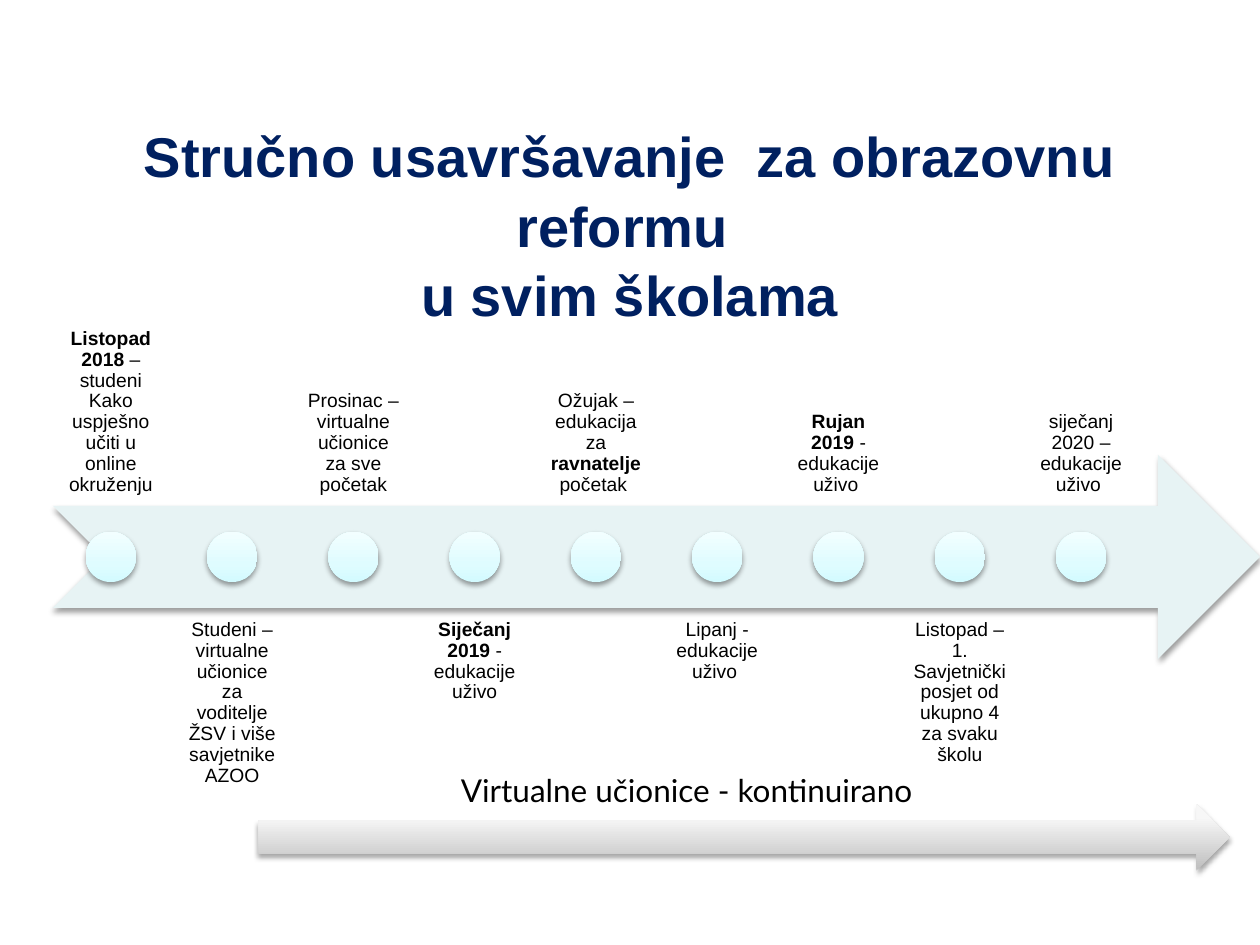
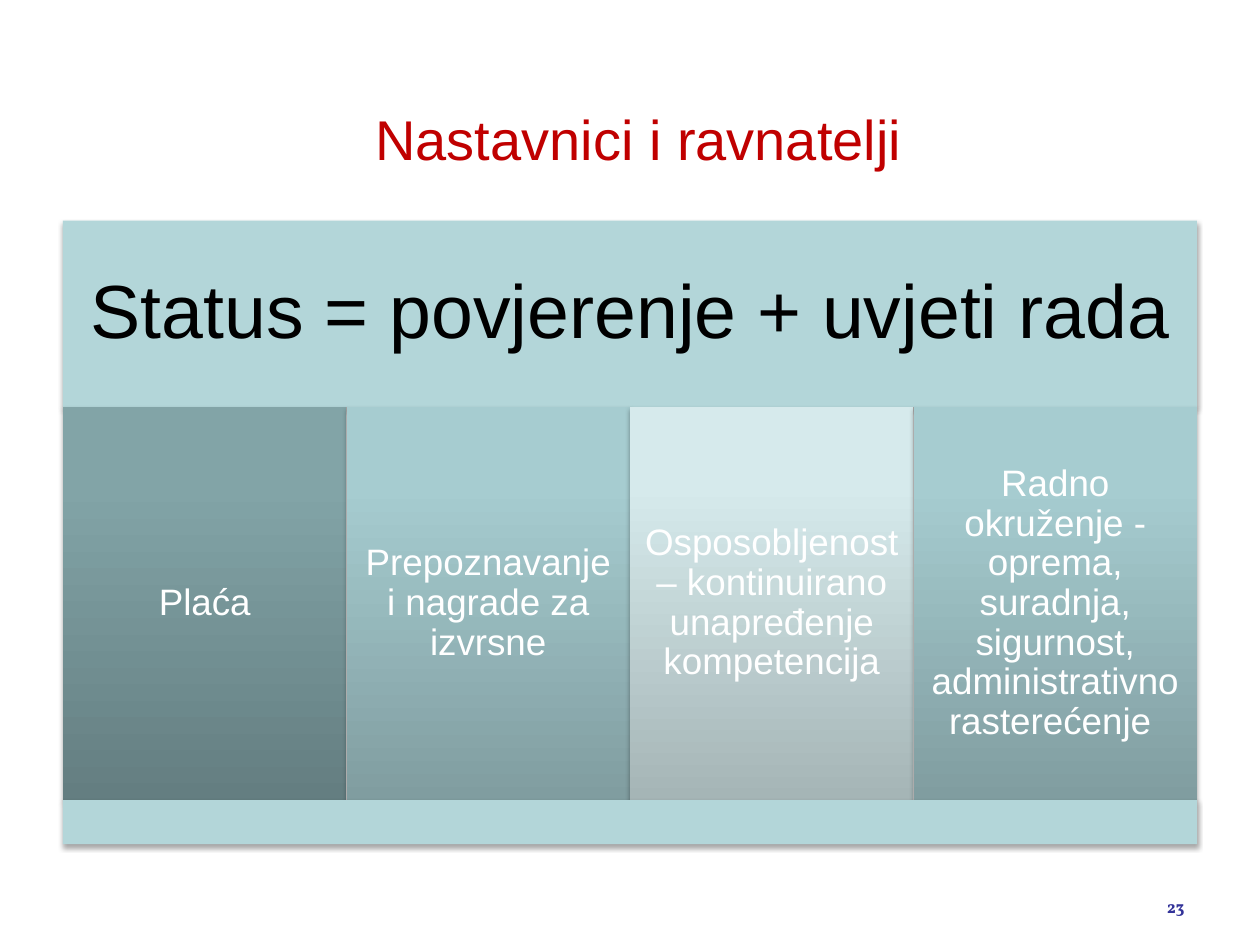
from lxml import etree
from pptx import Presentation
from pptx import util as u
from pptx.dml.color import RGBColor
from pptx.enum import shapes, text
from pptx.oxml import ns

BLACK, WHITE, NAVY, RED, INDIGO = "000000", "FFFFFF", "002060", "C00000", "333399"
ARROW_FILL, BAND_FILL = "E7F3F4", "B3D6D9"
DOT_FILL = [(0, "D3FBFF"), (35, "DFFCFF"), (100, "F2FEFF")]
GREY_FILL = [(0, "BEBEBE"), (80, "F7F7F7"), (100, "F8F8F8")]
DARK_FILL = [(0, "647E81"), (80, "82A4A7"), (100, "82A6A9")]
MEDIUM_FILL = [(0, "809DA0"), (80, "A6CCD0"), (100, "A6CED2")]
LIGHT_FILL = [(0, "A5B5B6"), (80, "D6EAEC"), (100, "D6ECEE")]

TOP, MIDDLE, BOTTOM = (text.MSO_ANCHOR.TOP, text.MSO_ANCHOR.MIDDLE,
                       text.MSO_ANCHOR.BOTTOM)
CENTER, RIGHT, LEFT = text.PP_ALIGN.CENTER, text.PP_ALIGN.RIGHT, text.PP_ALIGN.LEFT
Preset = shapes.MSO_SHAPE

MILESTONES = [
    [("Listopad 2018", True), (" – studeni Kako uspješno učiti u online okruženju", False)],
    [("Studeni – virtualne učionice za voditelje ŽSV i više savjetnike AZOO", False)],
    [("Prosinac – virtualne učionice za sve početak", False)],
    [("Siječanj 2019 ", True), ("- edukacije uživo", False)],
    [("Ožujak – edukacija za ", False), ("ravnatelje", True), (" početak ", False)],
    [("Lipanj - edukacije uživo ", False)],
    [("Rujan 2019 ", True), ("- edukacije uživo ", False)],
    [("Listopad – 1. Savjetnički posjet od ukupno 4 za svaku školu", False)],
    [("siječanj 2020 – edukacije uživo ", False)],
]
CONDITIONS = [
    ("Plaća", DARK_FILL),
    ("Prepoznavanje i nagrade za izvrsne", MEDIUM_FILL),
    ("Osposobljenost – kontinuirano unapređenje kompetencija", LIGHT_FILL),
    ("Radno okruženje - oprema, suradnja, sigurnost, administrativno rasterećenje ",
     MEDIUM_FILL),
]


def color(value):
    return RGBColor.from_string(value)


def inches(values):
    return [u.Inches(value) for value in values]


def add_color_xml(parent, value):
    return etree.SubElement(parent, ns.qn("a:srgbClr"), val=value)


def fill_gradient(shape, stops):
    shape.fill.gradient()
    shape.fill.gradient_angle = 90
    stop_list = shape.element.spPr.find(".//" + ns.qn("a:gsLst"))
    for stop in list(stop_list):
        stop_list.remove(stop)
    for position, value in stops:
        stop = etree.SubElement(stop_list, ns.qn("a:gs"), pos=str(position * 1000))
        add_color_xml(stop, value)


def add_shadow(shape, opacity, distance):
    shape.shadow.inherit = False
    effects = shape.element.spPr.find(ns.qn("a:effectLst"))
    shadow = etree.SubElement(
        effects, ns.qn("a:outerShdw"), blurRad=str(u.Pt(3.1)),
        dist=str(u.Pt(distance)), dir="5400000", rotWithShape="0")
    etree.SubElement(add_color_xml(shadow, BLACK), ns.qn("a:alpha"),
                     val=str(opacity * 1000))


def add_shape(page, preset, place, fill, opacity=35, distance=1.8):
    shape = page.shapes.add_shape(preset, *inches(place))
    if isinstance(fill, str):
        shape.fill.solid()
        shape.fill.fore_color.rgb = color(fill)
    else:
        fill_gradient(shape, fill)
    shape.line.fill.background()
    add_shadow(shape, opacity, distance)
    return shape


def add_span(para, words, size, value, font="Arial", bold=False):
    span = para.add_run()
    span.text = words
    span.font.size = u.Pt(size)
    span.font.name = font
    span.font.bold = bold
    span.font.color.rgb = color(value)


def set_frame(box, anchor, inset=None, wrap=True):
    frame = box.text_frame
    frame.auto_size = text.MSO_AUTO_SIZE.NONE
    frame.word_wrap = wrap
    frame.vertical_anchor = anchor
    if inset is not None:
        frame.margin_left = frame.margin_right = u.Inches(inset)
        frame.margin_top = frame.margin_bottom = u.Inches(inset)
    return frame.paragraphs[0]


def write_diagram_text(box, spans, size, value, anchor=MIDDLE, inset=0.09):
    para = set_frame(box, anchor, inset)
    para.alignment = CENTER
    para.line_spacing = 0.9
    for words, bold in spans:
        add_span(para, words, size, value, bold=bold)


def add_note(page, place, words, size, value, font, align=LEFT, bold=False, wrap=True):
    box = page.shapes.add_textbox(*inches(place))
    para = set_frame(box, TOP, wrap=wrap)
    para.alignment = align
    add_span(para, words, size, value, font, bold)


def add_page(deck, place, title_lines, value, bold=False):
    page = deck.slides.add_slide(deck.slide_layouts[5])
    title = page.shapes.title
    title.left, title.top, title.width, title.height = inches(place)
    para = set_frame(title, TOP)
    para.alignment = CENTER
    para.line_spacing = 1.04
    for index, line in enumerate(title_lines):
        if index:
            para.add_line_break()
        add_span(para, line, 32, value, bold=bold)
    return page


def add_milestone(page, index, spans):
    left = 0.42 + index * 7.7 / 8
    above = index % 2 == 0
    label = page.shapes.add_textbox(*inches((left, 2.4 if above else 4.83, 0.92, 1.62)))
    write_diagram_text(label, spans, 11, BLACK, BOTTOM if above else TOP)
    add_shape(page, Preset.OVAL, (left + 0.26, 4.22, 0.4, 0.4), DOT_FILL, 38, 1.6)


def build_timeline(deck):
    page = add_page(deck, (0.42, 0.89, 9.16, 1.25),
                    ["Stručno usavršavanje  za obrazovnu reformu ", "u svim školama"],
                    NAVY, bold=True)
    add_shape(page, Preset.NOTCHED_RIGHT_ARROW, (0.42, 3.61, 9.58, 1.62),
              ARROW_FILL, 38, 1.6)
    for index, spans in enumerate(MILESTONES):
        add_milestone(page, index, spans)
    add_shape(page, Preset.RIGHT_ARROW, (2.05, 6.38, 7.71, 0.53), GREY_FILL)
    add_note(page, (3.56, 6.07, 3.87, 0.4), "Virtualne učionice - kontinuirano",
             18, BLACK, "Lato", wrap=False)


def build_status(deck):
    page = add_page(deck, (0.63, 0.76, 9, 1.25), ["Nastavnici i ravnatelji "], RED)
    header = add_shape(page, Preset.RECTANGLE, (0.5, 1.75, 9, 1.48), BAND_FILL)
    write_diagram_text(header, [("Status = povjerenje + uvjeti rada", False)],
                       43, BLACK, inset=0.18)
    width = 9 / len(CONDITIONS)
    for index, (words, fill) in enumerate(CONDITIONS):
        column = add_shape(page, Preset.RECTANGLE,
                           (0.5 + index * width, 3.23, width, 3.12), fill)
        write_diagram_text(column, [(words, False)], 21, WHITE)
    add_shape(page, Preset.RECTANGLE, (0.5, 6.35, 9, 0.35), BAND_FILL)
    add_note(page, (8.81, 7.06, 0.69, 0.29), "23", 10, INDIGO, "Vollkorn", RIGHT, True)


def main():
    deck = Presentation()
    deck.slide_width, deck.slide_height = inches((10, 7.5))
    build_timeline(deck)
    build_status(deck)
    deck.save("out.pptx")


if __name__ == "__main__":
    main()
